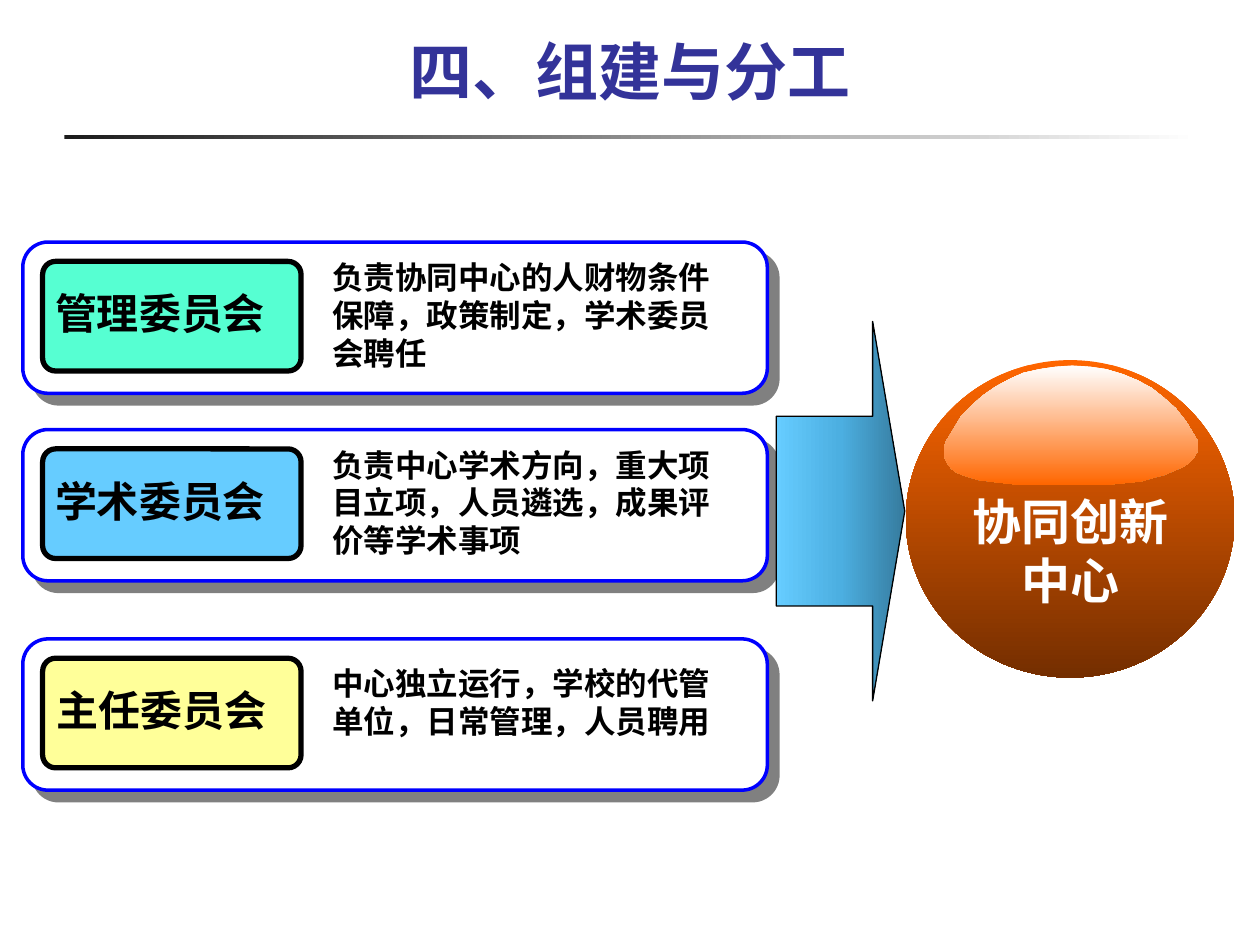
from lxml.etree import SubElement
from pptx import Presentation
from pptx.dml.color import RGBColor
from pptx.enum.shapes import MSO_SHAPE
from pptx.enum.text import MSO_ANCHOR, MSO_AUTO_SIZE, PP_ALIGN
from pptx.oxml.ns import qn
from pptx.util import Cm, Pt

COLORS = {
    "title": "333399", "text": "000000", "white": "FFFFFF", "border": "0000FF",
    "shadow": "808080", "rule": "1C1C1C", "mint": "56FFD2", "sky": "66CCFF",
    "mid_sky": "4CAFE1", "deep_sky": "367B9E", "yellow": "FFFF99",
    "orange": "FF6600", "brown": "742E00",
}

ROWS = [
    (4.88, "mint", "管理委员会", PP_ALIGN.LEFT, 0.2, 2.57,
     "负责协同中心的人财物条件保障，政策制定，学术委员会聘任"),
    (8.66, "sky", "学术委员会", PP_ALIGN.LEFT, 0.2, 2.57,
     "负责中心学术方向，重大项目立项，人员遴选，成果评价等学术事项"),
    (12.88, "yellow", "主任委员会", PP_ALIGN.CENTER, 0.38, 1.8,
     "中心独立运行，学校的代管单位，日常管理，人员聘用"),
]

HIGHLIGHT = [
    (947, 344), (950, 349), (951, 355), (950, 359), (947, 364), (943, 368),
    (938, 371), (931, 374), (924, 377), (916, 379), (906, 382), (896, 383),
    (886, 384), (875, 385), (821, 385), (811, 385), (802, 384), (793, 383),
    (785, 382), (777, 381), (770, 379), (764, 377), (759, 375), (755, 372),
    (752, 368), (750, 364), (749, 360), (749, 355), (751, 350), (757, 340),
    (763, 330), (771, 322), (780, 314), (790, 307), (801, 301), (812, 296),
    (825, 293), (838, 291), (851, 290), (865, 291), (878, 293), (891, 297),
    (903, 302), (914, 308), (924, 316), (933, 324), (941, 334),
]


def rgb(name):
    return RGBColor.from_string(COLORS[name])


class SlideBuilder:
    font = {"name": "Arial", "bold": True}

    def __init__(self, slide):
        self.slide = slide

    def fill_text(self, tf, lines, size, color, align=PP_ALIGN.LEFT):
        tf.word_wrap = True
        for i, line in enumerate(lines):
            p = tf.add_paragraph() if i else tf.paragraphs[0]
            p.alignment = align
            r = p.add_run()
            r.text = line
            for key, value in {**self.font, "size": Pt(size)}.items():
                setattr(r.font, key, value)
            r.font.color.rgb = rgb(color)

    def title(self, box, text):
        sp = self.slide.shapes.title
        for key, value in zip(("left", "top", "width", "height"), box):
            setattr(sp, key, Cm(value))
        tf = sp.text_frame
        tf.auto_size = MSO_AUTO_SIZE.NONE
        tf.vertical_anchor = MSO_ANCHOR.BOTTOM
        self.fill_text(tf, [text], 36, "title", PP_ALIGN.CENTER)

    def text(self, box, lines, size, color="text", align=PP_ALIGN.LEFT):
        tf = self.slide.shapes.add_textbox(*map(Cm, box)).text_frame
        tf.auto_size = MSO_AUTO_SIZE.SHAPE_TO_FIT_TEXT
        self.fill_text(tf, lines, size, color, align)

    def paint(self, sp, fill, line=None, angle=0):
        sp.shadow.inherit = False
        if isinstance(fill, str):
            sp.fill.solid()
            sp.fill.fore_color.rgb = rgb(fill)
        else:
            self.gradient(sp, fill, angle)
        if line:
            color, width = line
            sp.line.color.rgb = rgb(color)
            sp.line.width = Pt(width)
        else:
            sp.line.fill.background()

    def gradient(self, sp, names, angle):
        sp.fill.gradient()
        sp.fill.gradient_angle = angle
        stops = sp.element.spPr.find(f".//{qn('a:gsLst')}")
        for gs in list(stops):
            stops.remove(gs)
        for i, name in enumerate(names):
            pos = 100000 * i // (len(names) - 1)
            gs = SubElement(stops, qn("a:gs"), pos=str(pos))
            SubElement(gs, qn("a:srgbClr"), val=COLORS[name])

    def shape(self, kind, box, fill, line=None, adj=(), angle=0):
        sp = self.slide.shapes.add_shape(kind, *map(Cm, box))
        for i, value in enumerate(adj):
            sp.adjustments[i] = value
        self.paint(sp, fill, line, angle)
        return sp

    def drop_shadow(self, sp):
        effects = sp.element.spPr.find(qn("a:effectLst"))
        shadow = SubElement(effects, qn("a:outerShdw"), dist=str(Pt(8.5)),
                            dir=str(45 * 60000), algn="ctr", rotWithShape="0")
        SubElement(shadow, qn("a:srgbClr"), val=COLORS["shadow"])

    def outline(self, points, fill, angle):
        builder = self.slide.shapes.build_freeform(*points[0], scale=Cm(0.0254))
        builder.add_line_segments(points[1:], close=True)
        self.paint(builder.convert_to_shape(), fill, angle=angle)

    def committee(self, top, color, name, align, offset, height, duty):
        card = self.shape(MSO_SHAPE.ROUNDED_RECTANGLE, (0.46, top, 15.01, 3.05),
                          "white", ("border", 2), [0.167])
        self.drop_shadow(card)
        self.shape(MSO_SHAPE.ROUNDED_RECTANGLE, (0.86, top + 0.39, 5.21, 2.21),
                   color, ("text", 3), [0.119])
        self.text((6.45, top + offset, 8.41, height), [duty], 18)
        self.text((0.86, top + 0.8, 4.8, 1.27), [name], 24, align=align)


def main():
    prs = Presentation()
    prs.slide_width, prs.slide_height = Cm(25.4), Cm(19.05)
    s = SlideBuilder(prs.slides.add_slide(prs.slide_layouts[5]))

    s.shape(MSO_SHAPE.RECTANGLE, (1.3, 2.72, 22.86, 0.08), ("rule", "white"))
    s.title((0, 0.58, 25.4, 1.73), "四、组建与分工")
    for row in ROWS:
        s.committee(*row)

    s.shape(MSO_SHAPE.RIGHT_ARROW, (15.65, 6.48, 2.59, 7.65),
            ("sky", "mid_sky", "deep_sky"), ("text", 0.75), [0.5, 0.25])
    s.shape(MSO_SHAPE.OVAL, (18.26, 7.26, 6.63, 6.4), ("orange", "brown"), angle=270)
    s.outline(HIGHLIGHT, ("white", "orange"), 270)
    s.text((18.26, 9.78, 6.63, 2.64), ["协同创新", "中心"], 28, "white", PP_ALIGN.CENTER)

    prs.save("out.pptx")


if __name__ == "__main__":
    main()
